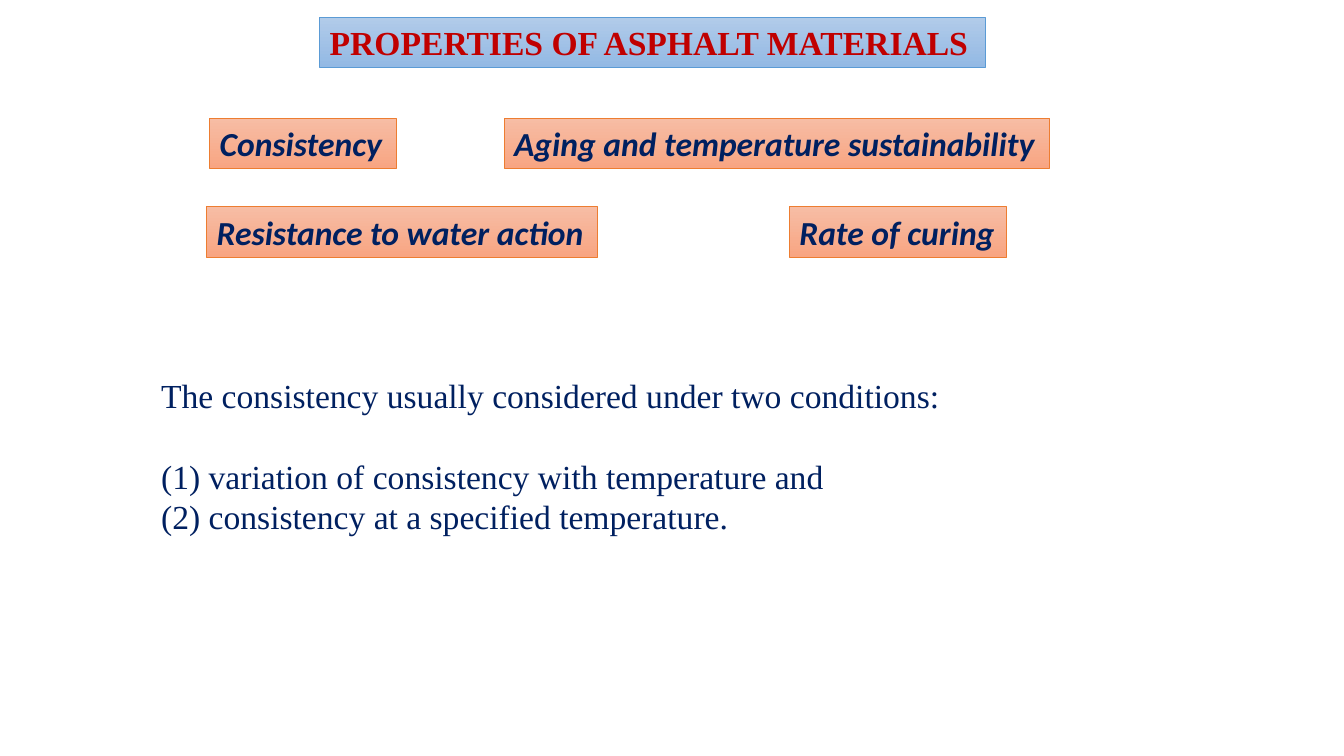
from pptx import Presentation
from pptx.dml.color import RGBColor
from pptx.enum.shapes import MSO_SHAPE
from pptx.enum.text import MSO_ANCHOR, MSO_AUTO_SIZE, PP_ALIGN
from pptx.util import Inches, Pt

RECT = MSO_SHAPE.RECTANGLE
TOP, LEFT, NO_FIT = MSO_ANCHOR.TOP, PP_ALIGN.LEFT, MSO_AUTO_SIZE.NONE
RED = RGBColor(0xC0, 0x00, 0x00)
NAVY = RGBColor(0x00, 0x20, 0x60)
BLUE_LINE = RGBColor(0x5B, 0x9B, 0xD5)
BLUE_STOPS = RGBColor(0xB1, 0xCB, 0xE9), RGBColor(0x93, 0xB9, 0xE4)
ORANGE_LINE = RGBColor(0xED, 0x7D, 0x31)
ORANGE_STOPS = RGBColor(0xF7, 0xBD, 0xA5), RGBColor(0xF8, 0xA5, 0x82)
SERIF, SANS = "Times New Roman", "Calibri"
BOX_HEIGHT = 0.5
ROW_TOP, ROW_STEP = 1.17, 0.88
LINE_PITCH = Pt(28.8)

PROPERTIES = [
    ("Consistency", 0, 2.08, 1.85),
    ("Aging and temperature sustainability", 0, 5, 5.41),
    ("Resistance to water action", 1, 2.05, 3.88),
    ("Rate of curing", 1, 7.83, 2.15),
]
CONDITIONS = [
    "The consistency usually considered under two conditions:",
    "(1) variation of consistency with temperature and",
    "(2) consistency at a specified temperature.",
]


def style_paragraph(p, name, color, bold=False, italic=False):
    """Set the font of a left-aligned paragraph."""
    p.alignment = LEFT
    f = p.font
    f.name, f.size, f.bold, f.italic = name, Pt(24), bold, italic
    f.color.rgb = color


def style_frame(tf):
    """Wrap text from the top of a frame of fixed size."""
    tf.auto_size = NO_FIT
    tf.word_wrap = True
    tf.vertical_anchor = TOP


def style_box(sp, text, stops, line):
    """Fill a box with a downward gradient and put text in it."""
    sp.fill.gradient()
    sp.fill.gradient_angle = 270
    for stop, color in zip(sp.fill.gradient_stops, stops):
        stop.color.rgb = color
    sp.line.color.rgb = line
    sp.line.width = Pt(0.5)
    tf = sp.text_frame
    tf.text = text
    style_frame(tf)
    tf.margin_right = 0


def add_title(s, text):
    """Place and format the title placeholder."""
    sp = s.shapes.title
    sp.left, sp.top = Inches(3.17), Inches(0.17)
    sp.width, sp.height = Inches(6.6), Inches(BOX_HEIGHT)
    style_box(sp, text, BLUE_STOPS, BLUE_LINE)
    style_paragraph(sp.text_frame.paragraphs[0], SERIF, RED, bold=True)


def add_property(s, text, row, left, width):
    """Add one property box on its row."""
    top = ROW_TOP + row * ROW_STEP
    sp = s.shapes.add_shape(RECT, Inches(left), Inches(top),
                            Inches(width), Inches(BOX_HEIGHT))
    sp.shadow.inherit = False
    style_box(sp, text, ORANGE_STOPS, ORANGE_LINE)
    style_paragraph(sp.text_frame.paragraphs[0], SANS, NAVY, bold=True, italic=True)


def add_conditions(s, lines):
    """Add the statement followed by its numbered conditions."""
    sp = s.shapes.add_textbox(Inches(1.5), Inches(3.67), Inches(10.5), Inches(1.72))
    tf = sp.text_frame
    tf.text = "\n".join(lines)
    style_frame(tf)
    for p in tf.paragraphs:
        style_paragraph(p, SERIF, NAVY)
        p.line_spacing = LINE_PITCH
    tf.paragraphs[1].space_before = LINE_PITCH


def main():
    """Build the slide and save it."""
    prs = Presentation()
    prs.slide_width, prs.slide_height = Inches(13.33), Inches(7.5)
    s = prs.slides.add_slide(prs.slide_layouts[5])
    add_title(s, "PROPERTIES OF ASPHALT MATERIALS")
    for text, row, left, width in PROPERTIES:
        add_property(s, text, row, left, width)
    add_conditions(s, CONDITIONS)
    prs.save("out.pptx")


if __name__ == "__main__":
    main()
